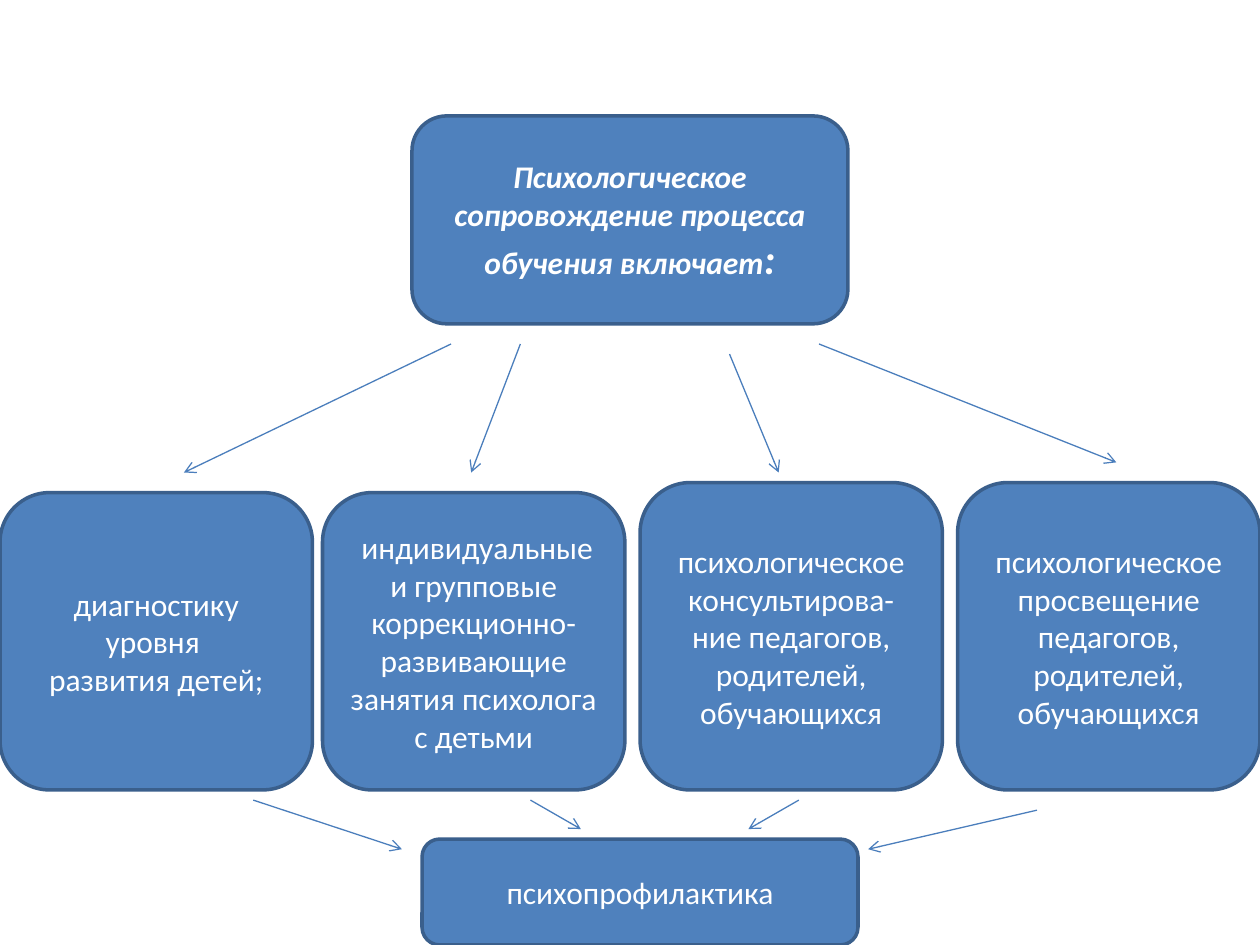
from lxml.etree import SubElement
from pptx import Presentation
from pptx.dml.color import RGBColor
from pptx.enum.shapes import MSO_CONNECTOR, MSO_SHAPE
from pptx.enum.text import MSO_ANCHOR, PP_ALIGN
from pptx.oxml.ns import qn
from pptx.util import Inches, Pt

BOX_BLUE = RGBColor(0x4F, 0x81, 0xBD)
BORDER_BLUE = RGBColor(0x3A, 0x5F, 0x8C)
ARROW_BLUE = RGBColor(0x4B, 0x7E, 0xBC)
WHITE = RGBColor(0xFF, 0xFF, 0xFF)

COMPONENTS = [
    (0, 3.91, 2.48, ["диагностику уровня ", "развития детей;"]),
    (2.56, 3.91, 2.4, [" индивидуальные и групповые коррекционно-развивающие занятия психолога с детьми"]),
    (5.08, 3.83, 2.4, ["психологическое консультирова-", "ние педагогов, родителей, обучающихся"]),
    (7.6, 3.83, 2.4, ["психологическое просвещение педагогов, родителей, обучающихся"]),
]
COMPONENT_BOTTOM = 6.27

ARROWS_TO_COMPONENTS = [
    (3.58, 2.73, 1.46, 3.75),
    (4.13, 2.73, 3.74, 3.75),
    (5.79, 2.81, 6.18, 3.75),
    (6.5, 2.73, 8.86, 3.67),
]
ARROWS_TO_PREVENTION = [
    (2.01, 6.35, 3.19, 6.74),
    (4.21, 6.35, 4.61, 6.58),
    (6.34, 6.35, 5.94, 6.58),
    (8.23, 6.43, 6.89, 6.74),
]


class SchemeSlide:
    font_name = "Calibri"
    font_size = Pt(18)

    def __init__(self, slide):
        self.slide = slide

    def format_run(self, run):
        run.font.name = self.font_name
        run.font.size = self.font_size
        run.font.color.rgb = WHITE

    def add_box(self, left, top, width, height, lines):
        shape = self.slide.shapes.add_shape(
            MSO_SHAPE.ROUNDED_RECTANGLE,
            Inches(left), Inches(top), Inches(width), Inches(height))
        shape.shadow.inherit = False
        shape.fill.solid()
        shape.fill.fore_color.rgb = BOX_BLUE
        shape.line.color.rgb = BORDER_BLUE
        shape.line.width = Pt(2)
        text_frame = shape.text_frame
        text_frame.word_wrap = True
        text_frame.vertical_anchor = MSO_ANCHOR.MIDDLE
        text_frame.text = "\n".join(lines)
        for paragraph in text_frame.paragraphs:
            paragraph.alignment = PP_ALIGN.CENTER
            for run in paragraph.runs:
                self.format_run(run)
        return shape

    def add_heading_box(self, left, top, width, height, text, ending):
        shape = self.add_box(left, top, width, height, [text])
        paragraph = shape.text_frame.paragraphs[0]
        ending_run = paragraph.add_run()
        ending_run.text = ending
        self.format_run(ending_run)
        ending_run.font.size = Pt(24)
        for run in paragraph.runs:
            run.font.bold = True
            run.font.italic = True

    def add_arrow(self, start_x, start_y, end_x, end_y):
        connector = self.slide.shapes.add_connector(
            MSO_CONNECTOR.STRAIGHT,
            Inches(start_x), Inches(start_y), Inches(end_x), Inches(end_y))
        connector.line.color.rgb = ARROW_BLUE
        connector.line.width = Pt(0.75)
        SubElement(connector.line._get_or_add_ln(), qn("a:tailEnd"), type="arrow")
        SubElement(connector._element.spPr, qn("a:effectLst"))


def main():
    presentation = Presentation()
    presentation.slide_width = Inches(10)
    presentation.slide_height = Inches(7.5)
    scheme = SchemeSlide(presentation.slides.add_slide(presentation.slide_layouts[6]))

    scheme.add_heading_box(
        3.27, 0.92, 3.46, 1.65,
        "Психологическое сопровождение процесса обучения включает", ":")
    for left, top, width, lines in COMPONENTS:
        scheme.add_box(left, top, width, COMPONENT_BOTTOM - top, lines)
    scheme.add_box(3.35, 6.66, 3.46, 0.84, ["психопрофилактика"])
    for arrow in ARROWS_TO_COMPONENTS + ARROWS_TO_PREVENTION:
        scheme.add_arrow(*arrow)

    presentation.save("out.pptx")


if __name__ == "__main__":
    main()
